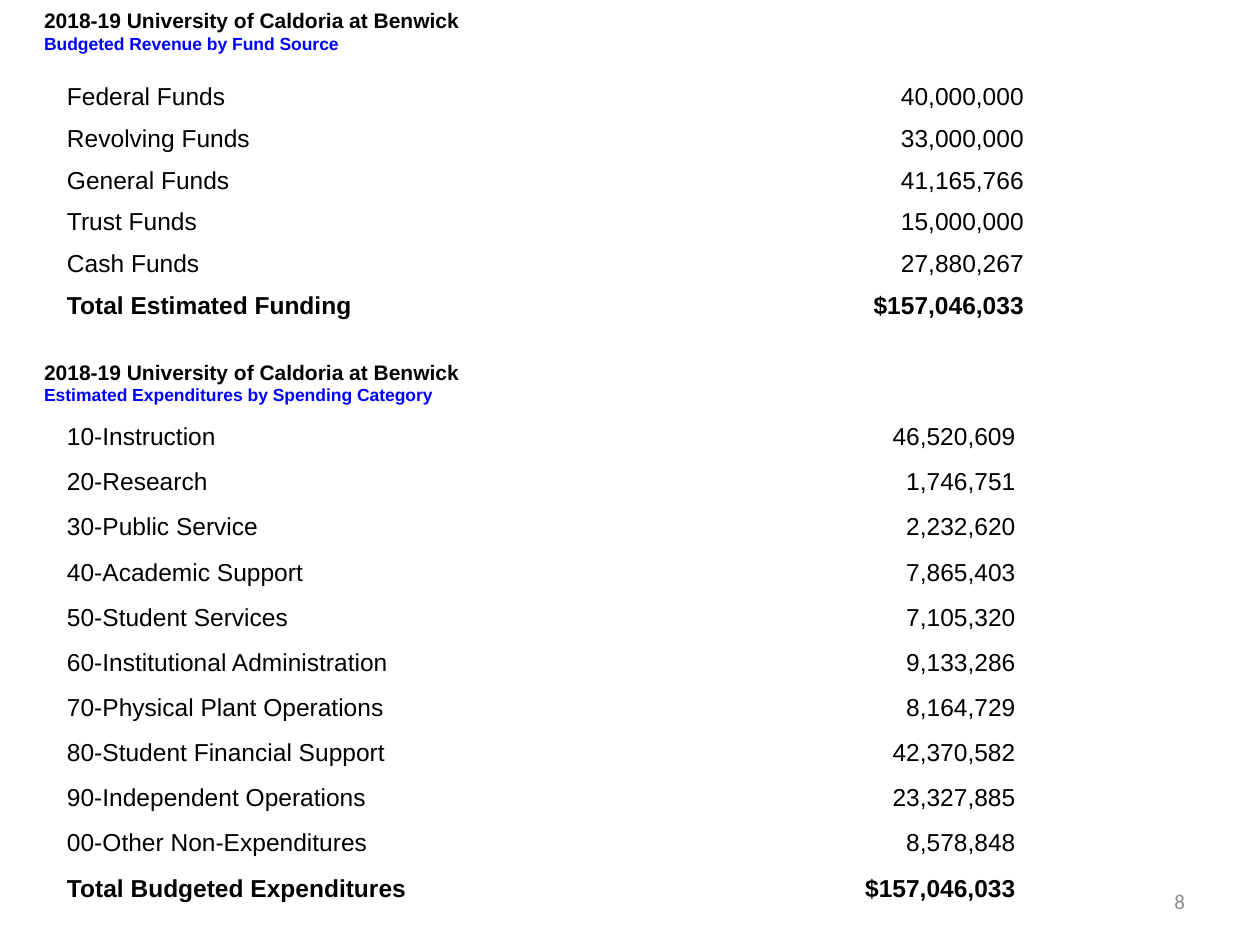
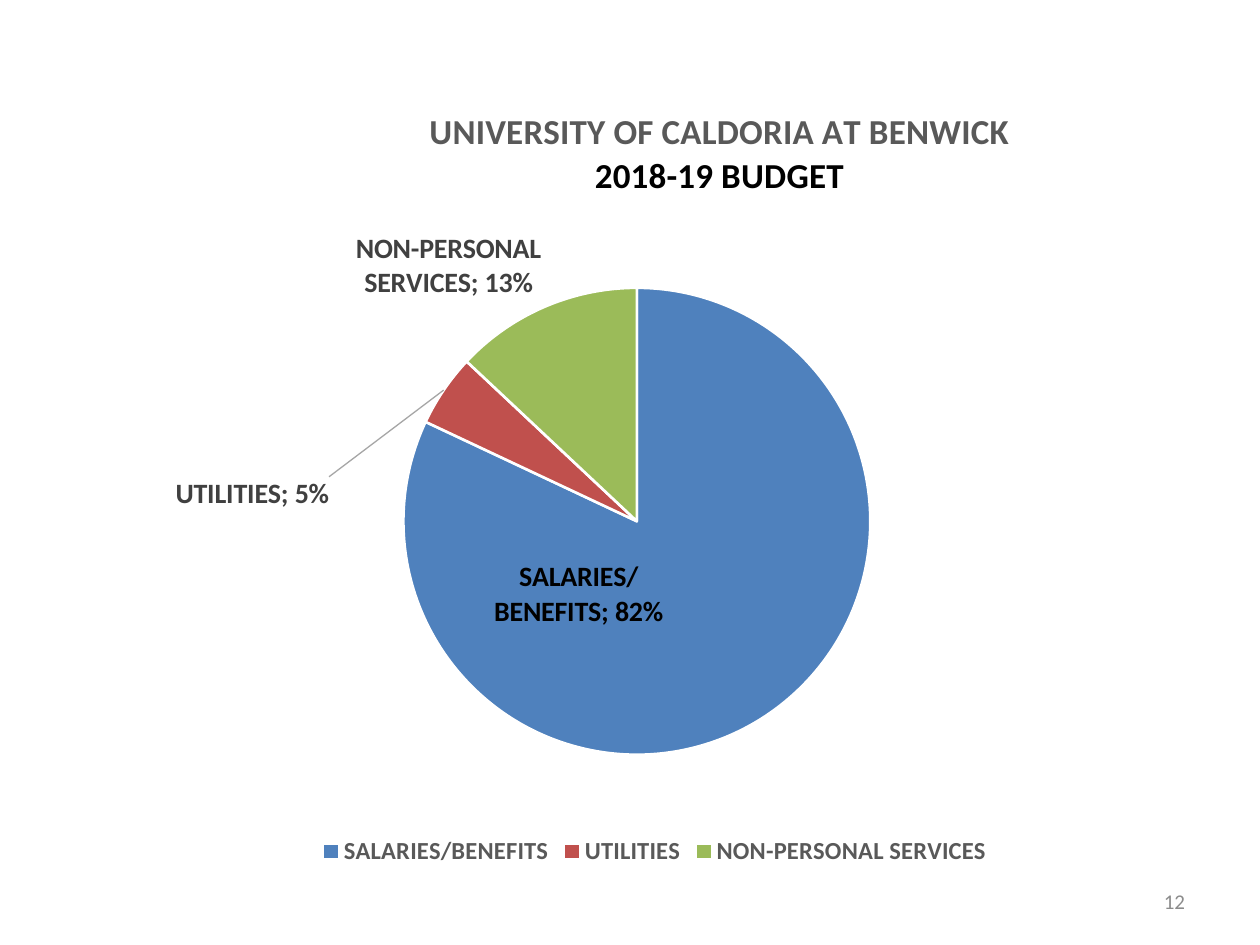
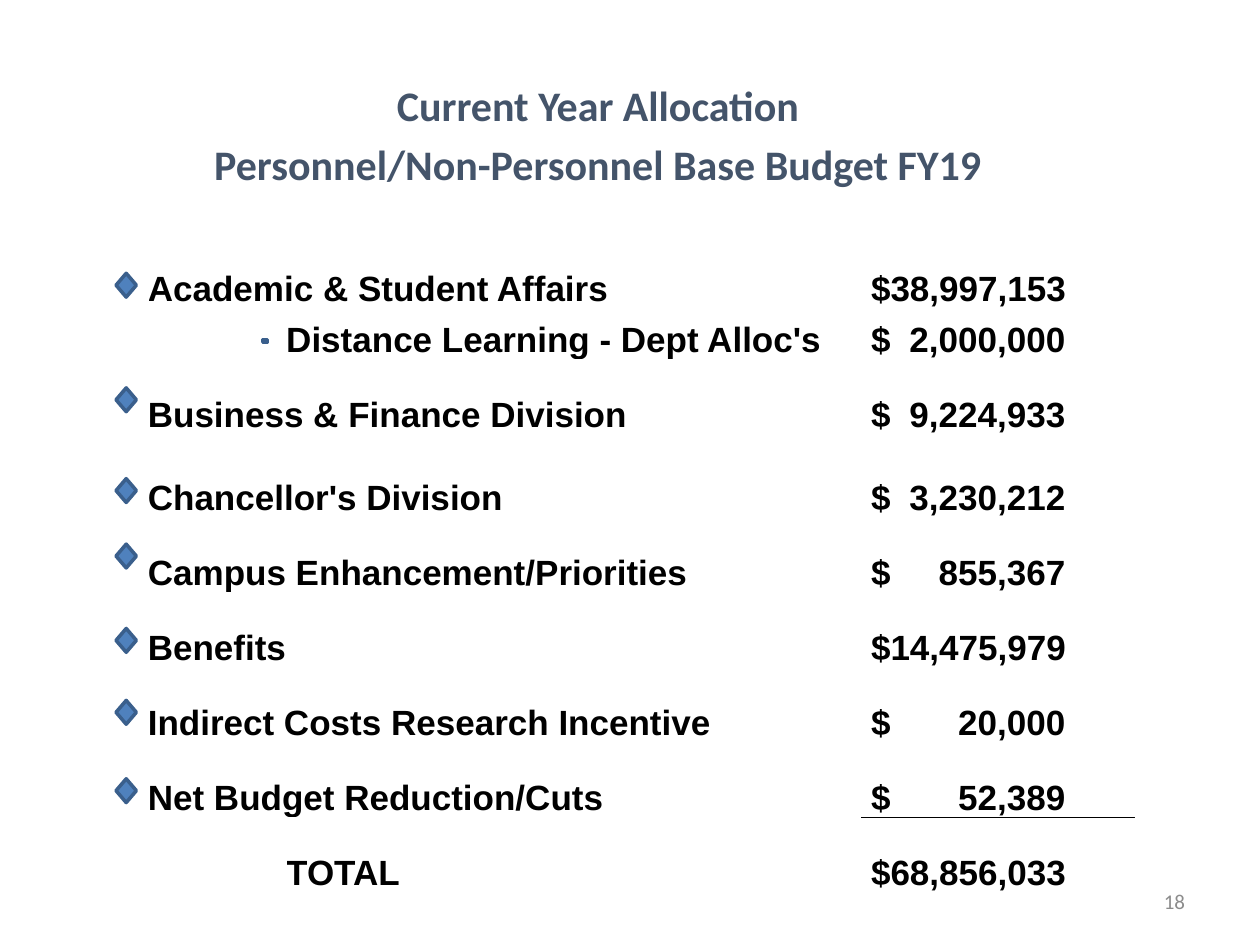
from dataclasses import dataclass
from typing import NamedTuple, Optional

from pptx import Presentation
from pptx.chart.data import CategoryChartData
from pptx.dml.color import RGBColor
from pptx.enum.chart import XL_CHART_TYPE, XL_LABEL_POSITION, XL_LEGEND_POSITION
from pptx.enum.shapes import MSO_SHAPE
from pptx.enum.text import MSO_ANCHOR, PP_ALIGN
from pptx.oxml import parse_xml
from pptx.oxml.ns import nsdecls, qn
from pptx.util import Cm, Pt

BLACK = RGBColor(0x00, 0x00, 0x00)
WHITE = RGBColor(0xFF, 0xFF, 0xFF)
LINK_BLUE = RGBColor(0x00, 0x00, 0xFF)
PAGE_GREY = RGBColor(0x8C, 0x8C, 0x8C)
TITLE_GREY = RGBColor(0x59, 0x59, 0x59)
LABEL_GREY = RGBColor(0x40, 0x40, 0x40)
SLATE = RGBColor(0x44, 0x54, 0x6A)
BLUE = RGBColor(0x4F, 0x81, 0xBD)
DARK_BLUE = RGBColor(0x3A, 0x5F, 0x8C)
RED = RGBColor(0xC0, 0x50, 0x4D)
GREEN = RGBColor(0x9B, 0xBB, 0x59)

UNIVERSITY = "University of Caldoria at Benwick"


@dataclass(frozen=True)
class TextStyle:
    size: float
    color: RGBColor = BLACK
    bold: bool = False
    name: str = "Arial"


HEADING = TextStyle(12, bold=True)
SUBHEADING = TextStyle(10, LINK_BLUE, True)
BODY = TextStyle(14)
TOTAL = TextStyle(14, bold=True)
PAGE_NUMBER = TextStyle(12, PAGE_GREY, name="Calibri")
ALLOCATION_TITLE = TextStyle(24, SLATE, True, "Calibri")
ALLOCATION = TextStyle(20, bold=True)
CHART_TITLE = TextStyle(20, TITLE_GREY, True, "Calibri")
CHART_SUBTITLE = TextStyle(20, BLACK, True, "Calibri")
LEGEND = TextStyle(14, TITLE_GREY, True, "Calibri")
CHART_LABEL = TextStyle(16, LABEL_GREY, True, "Calibri")
INNER_LABEL = TextStyle(16, BLACK, True, "Calibri")


class Budget(NamedTuple):
    heading: str
    heading_top: float
    table_top: float
    widths: tuple[float, float]
    row_height: float
    rows: list[tuple[str, str]]


class Slice(NamedTuple):
    name: str
    share: float
    color: RGBColor
    label_style: TextStyle
    label_position: XL_LABEL_POSITION
    label_offset: Optional[tuple[float, float]]


class Allocation(NamedTuple):
    label: str
    amount: str
    height: float = 1.51
    first_column: int = 1
    last_column: int = 2
    diamond_top: Optional[float] = None


BUDGETS = [
    Budget("Budgeted Revenue by Fund Source", 0.03, 1.47, (10.31, 9.14), 0.78, [
        ("Federal Funds", "40,000,000"),
        ("Revolving Funds", "33,000,000"),
        ("General Funds", "41,165,766"),
        ("Trust Funds", "15,000,000"),
        ("Cash Funds", "27,880,267"),
        ("Total Estimated Funding", "$157,046,033"),
    ]),
    Budget("Estimated Expenditures by Spending Category", 7.11, 8.26, (12.73, 6.55), 0.91, [
        ("10-Instruction", "46,520,609"),
        ("20-Research", "1,746,751"),
        ("30-Public Service", "2,232,620"),
        ("40-Academic Support", "7,865,403"),
        ("50-Student Services", "7,105,320"),
        ("60-Institutional Administration", "9,133,286"),
        ("70-Physical Plant Operations", "8,164,729"),
        ("80-Student Financial Support", "42,370,582"),
        ("90-Independent Operations", "23,327,885"),
        ("00-Other Non-Expenditures", "8,578,848"),
        ("Total Budgeted Expenditures", "$157,046,033"),
    ]),
]

SLICES = [
    Slice("SALARIES/BENEFITS", 0.82, BLUE, INNER_LABEL, XL_LABEL_POSITION.CENTER, (-0.1, -0.03)),
    Slice("UTILITIES", 0.05, RED, CHART_LABEL, XL_LABEL_POSITION.OUTSIDE_END, (-0.09, 0.15)),
    Slice("NON-PERSONAL SERVICES", 0.13, GREEN, CHART_LABEL, XL_LABEL_POSITION.OUTSIDE_END, None),
]

ALLOCATION_TITLES = [
    ("Current Year Allocation", 2.03),
    ("Personnel/Non-Personnel Base Budget FY19", 1.19),
]
TITLE_GAP = 0.86
ALLOCATION_WIDTHS = [1.91, 2.79, 7.34, 4.27, 5.51, 0.15]
AMOUNT_COLUMN = 4
ALLOCATIONS = [
    Allocation("Academic & Student Affairs", "$38,997,153", diamond_top=5.51),
    Allocation("Distance Learning - Dept Alloc's", "$\t2,000,000", 1.02, 2, 3),
    Allocation("Business & Finance Division", "$\t9,224,933", diamond_top=7.82),
    Allocation("Chancellor's Division", "$\t3,230,212", 1.68, diamond_top=9.65),
    Allocation("Campus Enhancement/Priorities", "$\t855,367", last_column=3, diamond_top=10.97),
    Allocation("Benefits", "$14,475,979", diamond_top=12.67),
    Allocation("Indirect Costs Research Incentive", "$\t20,000", last_column=3, diamond_top=14.12),
    Allocation("Net Budget Reduction/Cuts", "$\t52,389", diamond_top=15.7),
    Allocation("TOTAL", "$68,856,033", first_column=2),
]


def style_font(font, style: TextStyle) -> None:
    font.name = style.name
    font.size = Pt(style.size)
    font.bold = style.bold
    font.color.rgb = style.color


def add_run(paragraph, text: str, style: TextStyle) -> None:
    run = paragraph.add_run()
    run.text = text
    style_font(run.font, style)


def add_text_box(slide, left: float, top: float, width: float, height: float):
    frame = slide.shapes.add_textbox(Cm(left), Cm(top), Cm(width), Cm(height)).text_frame
    frame.word_wrap = True
    frame.vertical_anchor = MSO_ANCHOR.MIDDLE
    return frame.paragraphs[0]


def add_slide(presentation, number: int):
    slide = presentation.slides.add_slide(presentation.slide_layouts[6])
    paragraph = add_text_box(slide, 18.21, 17.65, 5.93, 1.02)
    paragraph.alignment = PP_ALIGN.RIGHT
    add_run(paragraph, str(number), PAGE_NUMBER)
    return slide


def add_plain_table(slide, left: float, top: float, widths, heights, margin: float):
    table = slide.shapes.add_table(
        len(heights), len(widths), Cm(left), Cm(top), Cm(sum(widths)), Cm(sum(heights))
    ).table
    table.first_row = False
    table.horz_banding = False
    for column, width in zip(table.columns, widths):
        column.width = Cm(width)
    for row, height in zip(table.rows, heights):
        row.height = Cm(height)
        for cell in row.cells:
            cell.fill.background()
            cell.vertical_anchor = MSO_ANCHOR.BOTTOM
            cell.margin_left = cell.margin_right = Cm(margin)
            cell.margin_top = cell.margin_bottom = Cm(margin)
    return table


def add_budget(slide, budget: Budget) -> None:
    paragraph = add_text_box(slide, 0.64, budget.heading_top, 9.96, 1.19)
    add_run(paragraph, f"2018-19 {UNIVERSITY}", HEADING)
    paragraph.add_line_break()
    add_run(paragraph, budget.heading, SUBHEADING)

    heights = [budget.row_height] * len(budget.rows)
    table = add_plain_table(slide, 1.27, budget.table_top, budget.widths, heights, 0.08)
    for row, texts in zip(table.rows, budget.rows):
        style = TOTAL if texts[0].startswith("Total") else BODY
        for cell, text, alignment in zip(row.cells, texts, (PP_ALIGN.LEFT, PP_ALIGN.RIGHT)):
            paragraph = cell.text_frame.paragraphs[0]
            paragraph.alignment = alignment
            paragraph.line_spacing = 1.15
            paragraph.space_after = Pt(10)
            add_run(paragraph, text, style)


def set_layout(parent, index: int, target: str = "", **values: float) -> None:
    parts = f'<c:layoutTarget val="{target}"/>' if target else ""
    if "w" in values or target or parent.tag == qn("c:title"):
        parts += '<c:xMode val="edge"/><c:yMode val="edge"/>'
    parts += "".join(f'<c:{key} val="{value}"/>' for key, value in values.items())
    layout = parse_xml(
        f'<c:layout {nsdecls("c")}><c:manualLayout>{parts}</c:manualLayout></c:layout>'
    )
    existing = parent.find(qn("c:layout"))
    if existing is None:
        parent.insert(index, layout)
    else:
        parent.replace(existing, layout)


def label_slices(series) -> None:
    labels = series.data_labels
    labels.show_value = True
    labels.show_category_name = True
    labels.number_format = "0%"
    labels.number_format_is_linked = False
    style_font(labels.font, CHART_LABEL)
    for index, part in enumerate(SLICES):
        point = series.points[index]
        point.format.fill.solid()
        point.format.fill.fore_color.rgb = part.color
        point.format.line.color.rgb = WHITE
        point.format.line.width = Pt(1.5)
        style_font(point.data_label.font, part.label_style)
        point.data_label.position = part.label_position

    element = series._element.find(qn("c:dLbls"))
    for label, part in zip(element.findall(qn("c:dLbl")), SLICES):
        label.find(qn("c:showVal")).set("val", "1")
        label.find(qn("c:showCatName")).set("val", "1")
        if part.label_offset:
            horizontal, vertical = part.label_offset
            set_layout(label, 1, x=horizontal, y=vertical)
    for flag in list(element.iter(qn("c:showBubbleSize"))):
        flag.addnext(parse_xml(f'<c:separator {nsdecls("c")}>; </c:separator>'))
    leader = element.find(qn("c:showLeaderLines"))
    if leader is None:
        leader = parse_xml(f'<c:showLeaderLines {nsdecls("c")} val="1"/>')
        element.append(leader)
    leader.set("val", "1")
    leader.addnext(parse_xml(
        f'<c:leaderLines {nsdecls("c", "a")}><c:spPr><a:ln w="9525"><a:solidFill>'
        '<a:srgbClr val="A6A6A6"/></a:solidFill></a:ln></c:spPr></c:leaderLines>'
    ))


def add_budget_pie(slide) -> None:
    chart_data = CategoryChartData(number_format="0%")
    chart_data.categories = [part.name for part in SLICES]
    chart_data.add_series("Series 1", [part.share for part in SLICES])
    chart = slide.shapes.add_chart(
        XL_CHART_TYPE.PIE, Cm(1.04), Cm(0.76), Cm(24.33), Cm(16.81), chart_data
    ).chart
    style_font(chart.font, TextStyle(10, name="Calibri"))

    chart.has_title = True
    frame = chart.chart_title.text_frame
    add_run(frame.paragraphs[0], UNIVERSITY.upper(), CHART_TITLE)
    add_run(frame.add_paragraph(), "2018-19 BUDGET", CHART_SUBTITLE)
    for paragraph in frame.paragraphs:
        paragraph.alignment = PP_ALIGN.CENTER
    set_layout(chart.chart_title._element, 1, x=0.31, y=0.08)

    chart.has_legend = True
    chart.legend.position = XL_LEGEND_POSITION.BOTTOM
    chart.legend.include_in_layout = False
    style_font(chart.legend.font, LEGEND)

    plot = chart.plots[0]
    plot.vary_by_categories = True
    label_slices(plot.series[0])
    plot_area = next(chart._chartSpace.iter(qn("c:plotArea")))
    set_layout(plot_area, 0, "inner", x=0.29, y=0.3, w=0.39, h=0.56)


def add_border(cell, side: str) -> None:
    cell._tc.get_or_add_tcPr().insert(0, parse_xml(
        f'<a:{side} {nsdecls("a")} w="6350"><a:solidFill>'
        f'<a:srgbClr val="{BLACK}"/></a:solidFill></a:{side}>'
    ))


def add_amount(cell, amount: str) -> None:
    cell.margin_left = Cm(0.18)
    paragraph = cell.text_frame.paragraphs[0]
    paragraph._p.get_or_add_pPr().append(parse_xml(
        f'<a:tabLst {nsdecls("a")}><a:tab pos="{Cm(3.92)}" algn="r"/></a:tabLst>'
    ))
    add_run(paragraph, amount, ALLOCATION)


def add_marker(slide, kind: MSO_SHAPE, left: float, top: float, width: float, height: float) -> None:
    shape = slide.shapes.add_shape(kind, Cm(left), Cm(top), Cm(width), Cm(height))
    shape.shadow.inherit = False
    shape.fill.solid()
    shape.fill.fore_color.rgb = BLUE
    shape.line.color.rgb = DARK_BLUE
    shape.line.width = Pt(2)


def add_allocations(slide) -> None:
    heights = [height for _, height in ALLOCATION_TITLES]
    heights += [TITLE_GAP] + [allocation.height for allocation in ALLOCATIONS]
    table = add_plain_table(slide, 1.07, 0.64, ALLOCATION_WIDTHS, heights, 0)
    last_column = len(ALLOCATION_WIDTHS) - 1
    for row, (title, _) in enumerate(ALLOCATION_TITLES):
        table.cell(row, 0).merge(table.cell(row, last_column))
        paragraph = table.cell(row, 0).text_frame.paragraphs[0]
        paragraph.alignment = PP_ALIGN.CENTER
        add_run(paragraph, title, ALLOCATION_TITLE)

    for row, allocation in enumerate(ALLOCATIONS, len(ALLOCATION_TITLES) + 1):
        cell = table.cell(row, allocation.first_column)
        if allocation.last_column > allocation.first_column:
            cell.merge(table.cell(row, allocation.last_column))
        add_run(cell.text_frame.paragraphs[0], allocation.label, ALLOCATION)
        add_amount(table.cell(row, AMOUNT_COLUMN), allocation.amount)
        if allocation.diamond_top is not None:
            add_marker(slide, MSO_SHAPE.DIAMOND, 2.34, allocation.diamond_top, 0.41, 0.48)
    add_marker(slide, MSO_SHAPE.MATH_MINUS, 5.28, 6.78, 0.13, 0.18)

    total_row = len(heights) - 1
    add_border(table.cell(total_row - 1, AMOUNT_COLUMN), "lnB")
    add_border(table.cell(total_row, AMOUNT_COLUMN), "lnT")


def main() -> None:
    presentation = Presentation()
    presentation.slide_width = Cm(25.4)
    presentation.slide_height = Cm(19.05)

    budget_slide = add_slide(presentation, 8)
    for budget in BUDGETS:
        add_budget(budget_slide, budget)
    add_budget_pie(add_slide(presentation, 12))
    add_allocations(add_slide(presentation, 18))

    presentation.save("out.pptx")


if __name__ == "__main__":
    main()
